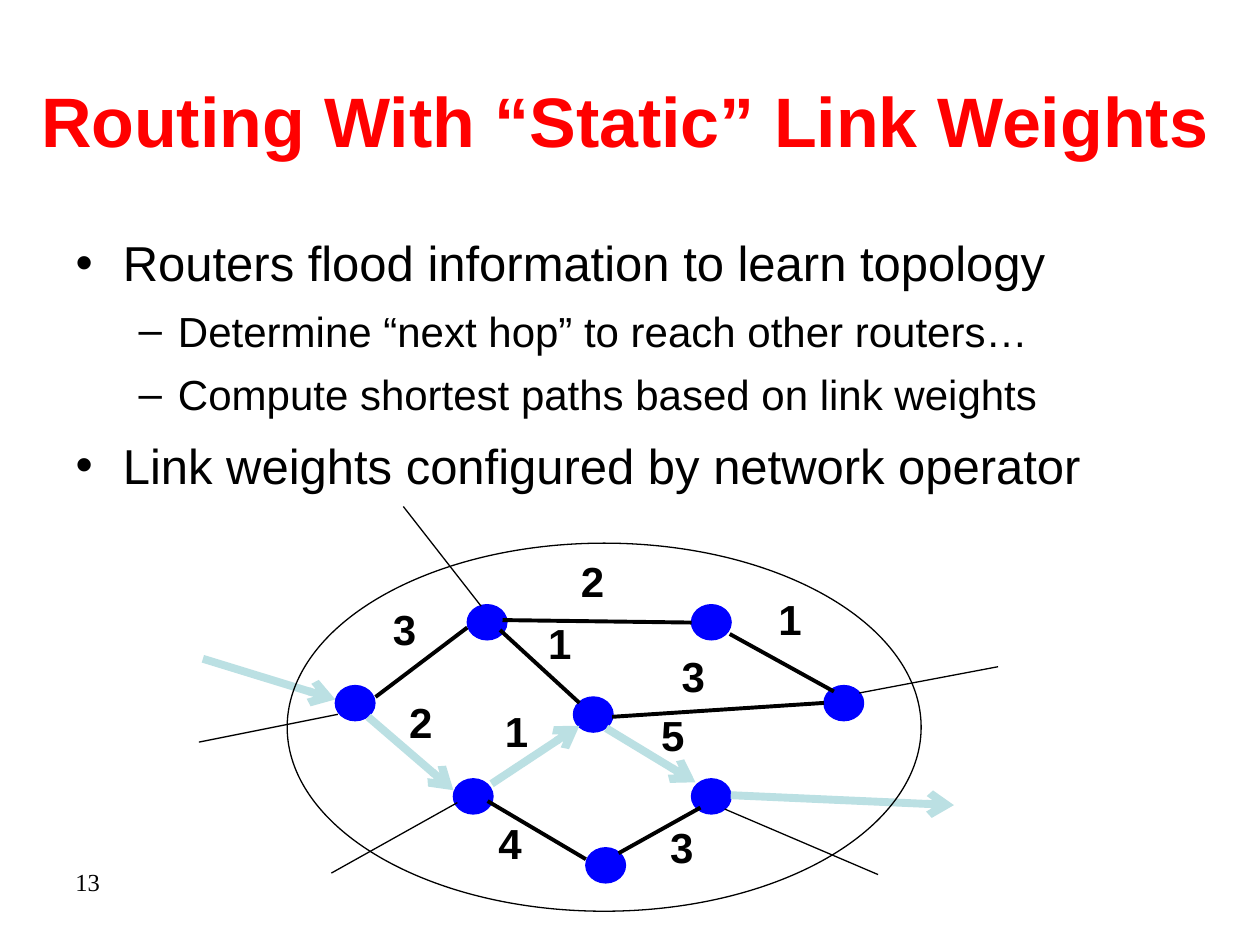
"""Build the slide on routing with static link weights."""
from lxml.etree import SubElement
from pptx import Presentation
from pptx.dml.color import RGBColor
from pptx.enum.shapes import MSO_CONNECTOR, MSO_SHAPE
from pptx.enum.text import MSO_ANCHOR, MSO_AUTO_SIZE
from pptx.oxml.ns import qn
from pptx.util import Cm, Pt

RED = RGBColor(0xFF, 0x00, 0x00)
BLUE = RGBColor(0x00, 0x00, 0xFF)
PALE = RGBColor(0xBB, 0xE0, 0xE3)
BLACK = RGBColor(0x00, 0x00, 0x00)

BULLETS = [
    (0, "Routers flood information to learn topology"),
    (1, "Determine “next hop” to reach other routers…"),
    (1, "Compute shortest paths based on link weights"),
    (0, "Link weights configured by network operator"),
]
ROUTERS = [
    (6.76, 13.82), (9.14, 15.7), (9.42, 12.19), (11.56, 14.05),
    (13.94, 15.7), (13.94, 12.19), (11.81, 17.09), (16.61, 13.82),
]
LINKS = [
    (7.57, 14.05, 9.42, 12.65), (10.08, 12.7, 11.68, 14.17),
    (9.83, 16.15, 11.81, 17.32), (12.47, 17.2, 14.12, 16.28),
    (12.34, 14.45, 16.61, 14.17), (10.13, 12.5, 13.94, 12.55),
    (14.71, 12.78, 16.81, 13.94),
]
ROUTE = [
    (4.09, 13.28, 6.76, 14.1), (7.42, 14.45, 9.14, 15.93),
    (9.91, 15.8, 11.68, 14.63), (12.22, 14.68, 14.02, 15.77),
    (14.73, 16.03, 19.23, 16.23),
]
OUTSIDE_LINKS = [
    (6.81, 14.4, 4.01, 14.96), (14.61, 16.31, 17.7, 17.63),
    (20.12, 13.44, 17.32, 13.97), (8.13, 10.21, 9.7, 12.22),
    (9.22, 16.18, 6.68, 17.6),
]
WEIGHTS = [
    ("3", 7.67, 12.04), ("2", 11.46, 11.07), ("2", 8, 13.92),
    ("1", 10.8, 12.32), ("1", 9.93, 14.1), ("3", 13.49, 12.98),
    ("1", 15.44, 11.84), ("4", 9.8, 16.36), ("5", 13.08, 14.17),
    ("3", 13.26, 16.43),
]


class NetworkSlide:
    """Hold the style and the current slide."""

    font = "Arial"
    level_sizes = (28, 24)

    def __init__(self, deck):
        self.slide = deck.slides.add_slide(deck.slide_layouts[1])

    def place(self, holder, left, top, width, height):
        holder.left, holder.top = Cm(left), Cm(top)
        holder.width, holder.height = Cm(width), Cm(height)
        holder.text_frame.auto_size = MSO_AUTO_SIZE.NONE

    def format(self, paragraph, size, color=BLACK, bold=False, font=font):
        for run in paragraph.runs:
            run.font.name = font
            run.font.size = Pt(size)
            run.font.bold = bold
            run.font.color.rgb = color

    def title(self, wording, *box):
        heading = self.slide.shapes.title
        self.place(heading, *box)
        heading.text_frame.text = wording
        heading.text_frame.vertical_anchor = MSO_ANCHOR.MIDDLE
        self.format(heading.text_frame.paragraphs[0], 40, RED, True)

    def bullets(self, items, *box):
        body = self.slide.placeholders[1]
        self.place(body, *box)
        frame = body.text_frame
        frame.text = "\n".join(wording for _, wording in items)
        for paragraph, (level, _) in zip(frame.paragraphs, items):
            paragraph.level = level
            paragraph.line_spacing = 1.1
            self.format(paragraph, self.level_sizes[level])

    def label(self, wording, left, top, width=0.94, height=1.27,
              size=24, bold=True, font=font):
        box = self.slide.shapes.add_textbox(
            Cm(left), Cm(top), Cm(width), Cm(height))
        box.text_frame.text = wording
        self.format(box.text_frame.paragraphs[0], size, BLACK, bold, font)

    def ellipse(self, left, top, width, height, line=BLACK, fill=None):
        oval = self.slide.shapes.add_shape(
            MSO_SHAPE.OVAL, Cm(left), Cm(top), Cm(width), Cm(height))
        oval.shadow.inherit = False
        oval.line.color.rgb = line
        oval.line.width = Pt(0.75)
        if fill is None:
            oval.fill.background()
        else:
            oval.fill.solid()
            oval.fill.fore_color.rgb = fill

    def link(self, ends, width, color=BLACK, arrow=False):
        connector = self.slide.shapes.add_connector(
            MSO_CONNECTOR.STRAIGHT, *(Cm(value) for value in ends))
        connector.line.color.rgb = color
        connector.line.width = Pt(width)
        properties = connector._element.spPr
        if arrow:
            SubElement(properties.find(qn("a:ln")), qn("a:tailEnd"), type="arrow")
        SubElement(properties, qn("a:effectLst"))


def main():
    deck = Presentation()
    deck.slide_width, deck.slide_height = Cm(25.4), Cm(19.05)
    network = NetworkSlide(deck)
    network.title("Routing With “Static” Link Weights", 0.43, 0.81, 24.33, 3.18)
    network.bullets(BULLETS, 1.27, 4.45, 22.86, 12.57)
    network.label("13", 1.27, 17.35, 5.92, 1.32,
                  size=14, bold=False, font="Times New Roman")
    for left, top in ROUTERS:
        network.ellipse(left, top, 0.8, 0.71, BLUE, BLUE)
    for ends in LINKS:
        network.link(ends, 2.25)
    for ends in ROUTE:
        network.link(ends, 4.5, PALE, arrow=True)
    for weight in WEIGHTS:
        network.label(*weight)
    network.ellipse(5.79, 10.95, 12.78, 7.42)
    for ends in OUTSIDE_LINKS:
        network.link(ends, 0.75)
    deck.save("out.pptx")


if __name__ == "__main__":
    main()
